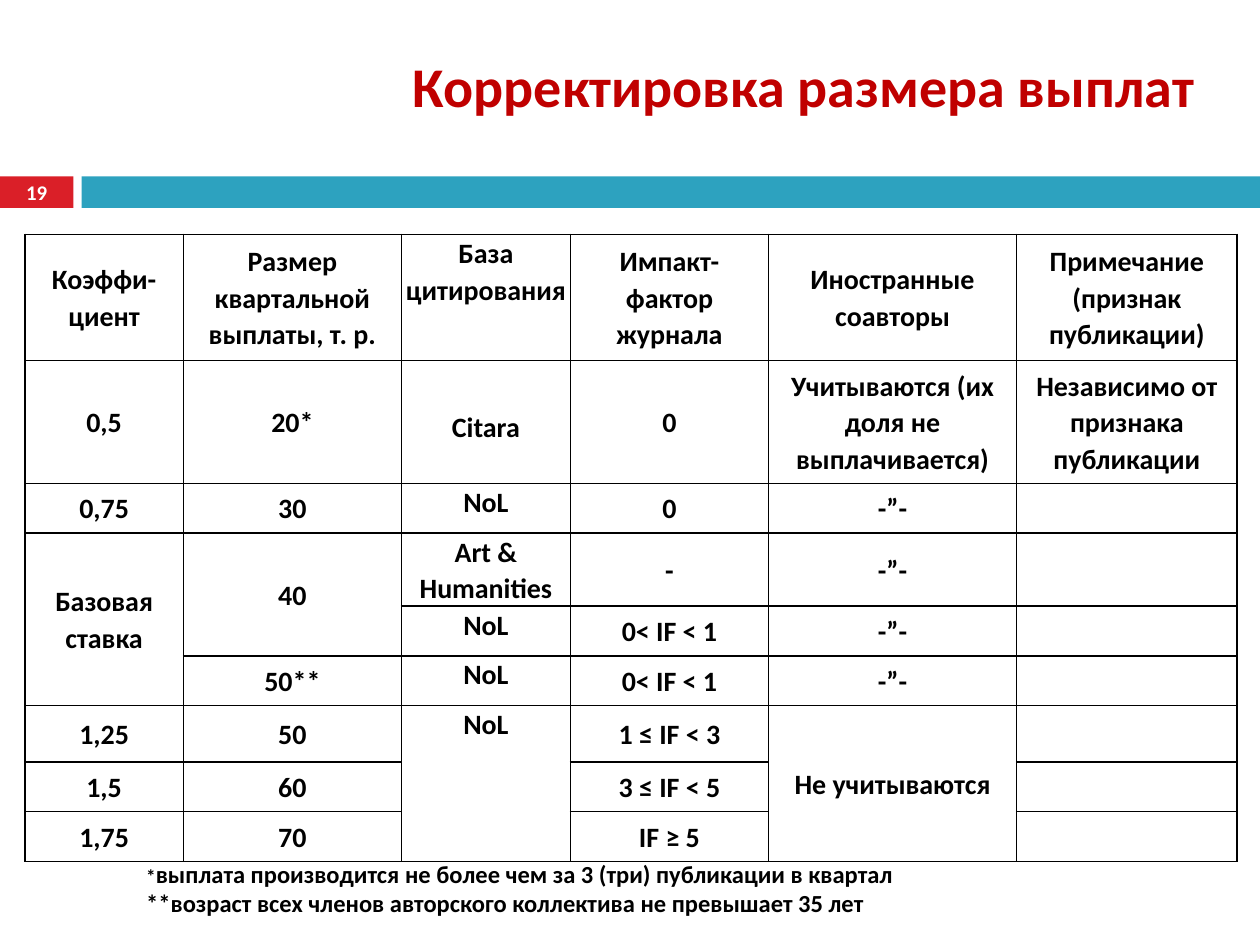
from pptx import Presentation
from pptx.dml.color import RGBColor
from pptx.enum.shapes import MSO_SHAPE as Shape
from pptx.enum.text import MSO_ANCHOR as Anchor, PP_ALIGN as Align
from pptx.oxml import parse_xml
from pptx.oxml.ns import nsdecls
from pptx.util import Pt

FONT = "Calibri"
BLACK, WHITE, RED, TEAL, TITLE_RED = "000000", "FFFFFF", "DA1F28", "2DA2BF", "C00000"

TITLE = "Корректировка размера выплат"
PAGE_NUMBER = "19"
DITTO = "-”-"
FIRST_BASE, SECOND_BASE = "Citara", "NoL"
ROWS = [
    ["Коэффи-циент", "Размер квартальной выплаты, т. р.", "База цитирования",
     "Импакт-фактор журнала", "Иностранные соавторы", "Примечание (признак публикации)"],
    ["0,5", "20*", FIRST_BASE, "0", "Учитываются (их доля не выплачивается)",
     "Независимо от признака публикации"],
    ["0,75", "30", SECOND_BASE, "0", DITTO, ""],
    ["Базовая ставка", "40", "Art & Humanities", "-", DITTO, ""],
    ["", "", SECOND_BASE, "0< IF < 1", DITTO, ""],
    ["", "50**", SECOND_BASE, "0< IF < 1", DITTO, ""],
    ["1,25", "50", SECOND_BASE, "1 ≤ IF < 3", "Не учитываются", ""],
    ["1,5", "60", "", "3 ≤ IF < 5", "", ""],
    ["1,75", "70", "", "IF ≥ 5", "", ""],
]
MERGES = [((3, 0), (5, 0)), ((3, 1), (4, 1)), ((6, 2), (8, 2)), ((6, 4), (8, 4))]
COLUMN_WIDTHS = [90.6, 124.6, 96.6, 113.2, 141.8, 126]
ROW_HEIGHTS = [72, 70.2, 28.4, 41.8, 28.4, 28.4, 32.3, 28.4, 28.4]
DATABASE_COLUMN = 2
FIRST_BASE_OFFSET = 27.5
NOTES = [
    [("*", 11), ("выплата производится не более чем за 3 (три) публикации в квартал", 14)],
    [("**возраст всех членов авторского коллектива не превышает 35 лет", 14)],
]


def color(value):
    return RGBColor.from_string(value)


def add_span(para, text, size, value=BLACK):
    span = para.add_run()
    span.text = text
    span.font.name, span.font.size, span.font.bold = FONT, Pt(size), True
    span.font.color.rgb = color(value)


def add_bar(page, left, width, fill):
    bar = page.shapes.add_shape(Shape.RECTANGLE, Pt(left), Pt(100.8), Pt(width), Pt(18))
    bar.shadow.inherit = False
    bar.fill.solid()
    bar.fill.fore_color.rgb = color(fill)
    bar.line.fill.background()
    return bar


def add_borders(cell):
    properties = cell._tc.get_or_add_tcPr()
    for index, side in enumerate(("lnL", "lnR", "lnT", "lnB")):
        properties.insert(index, parse_xml(
            f'<a:{side} {nsdecls("a")} w="12700"><a:solidFill>'
            f'<a:srgbClr val="{BLACK}"/></a:solidFill></a:{side}>'))


def fill_cell(cell, text, column):
    cell.fill.solid()
    cell.fill.fore_color.rgb = color(WHITE)
    add_borders(cell)
    cell.vertical_anchor = Anchor.MIDDLE
    if column == DATABASE_COLUMN:
        cell.vertical_anchor = Anchor.TOP
        cell.margin_left = cell.margin_right = cell.margin_bottom = 0
        cell.margin_top = Pt(FIRST_BASE_OFFSET if text == FIRST_BASE else 0)
    para = cell.text_frame.paragraphs[0]
    para.alignment = Align.CENTER
    para.line_spacing = 1.07
    para.space_after = Pt(8)
    if text:
        add_span(para, text, 16)
    else:
        para.font.size = Pt(16)


def add_payments(page):
    frame = page.shapes.add_table(len(ROWS), len(COLUMN_WIDTHS), Pt(14.2), Pt(134),
                                  Pt(sum(COLUMN_WIDTHS)), Pt(sum(ROW_HEIGHTS)))
    table = frame.table
    table.first_row = table.horz_banding = False
    for column, width in zip(table.columns, COLUMN_WIDTHS):
        column.width = Pt(width)
    for row, height in zip(table.rows, ROW_HEIGHTS):
        row.height = Pt(height)
    for i, texts in enumerate(ROWS):
        for j, text in enumerate(texts):
            fill_cell(table.cell(i, j), text, j)
    for first, last in MERGES:
        table.cell(*first).merge(table.cell(*last))


def main():
    deck = Presentation()
    deck.slide_width, deck.slide_height = Pt(720), Pt(540)
    page = deck.slides.add_slide(deck.slide_layouts[5])

    title = page.shapes.title
    title.left, title.top, title.width, title.height = Pt(224), Pt(20), Pt(471), Pt(57)
    title.text_frame.vertical_anchor = Anchor.MIDDLE
    para = title.text_frame.paragraphs[0]
    para.alignment = Align.CENTER
    add_span(para, TITLE, 32, TITLE_RED)

    number = add_bar(page, 0, 42, RED)
    add_bar(page, 46.6, 673.4, TEAL)
    frame = number.text_frame
    frame.margin_top = frame.margin_bottom = 0
    frame.vertical_anchor = Anchor.MIDDLE
    frame.paragraphs[0].alignment = Align.CENTER
    add_span(frame.paragraphs[0], PAGE_NUMBER, 11.9, WHITE)

    add_payments(page)

    box = page.shapes.add_textbox(Pt(76.5), Pt(487), Pt(443), Pt(41))
    box.text_frame.word_wrap = False
    box.text_frame.vertical_anchor = Anchor.MIDDLE
    for index, spans in enumerate(NOTES):
        para = box.text_frame.add_paragraph() if index else box.text_frame.paragraphs[0]
        for text, size in spans:
            add_span(para, text, size)

    deck.save("out.pptx")


if __name__ == "__main__":
    main()
